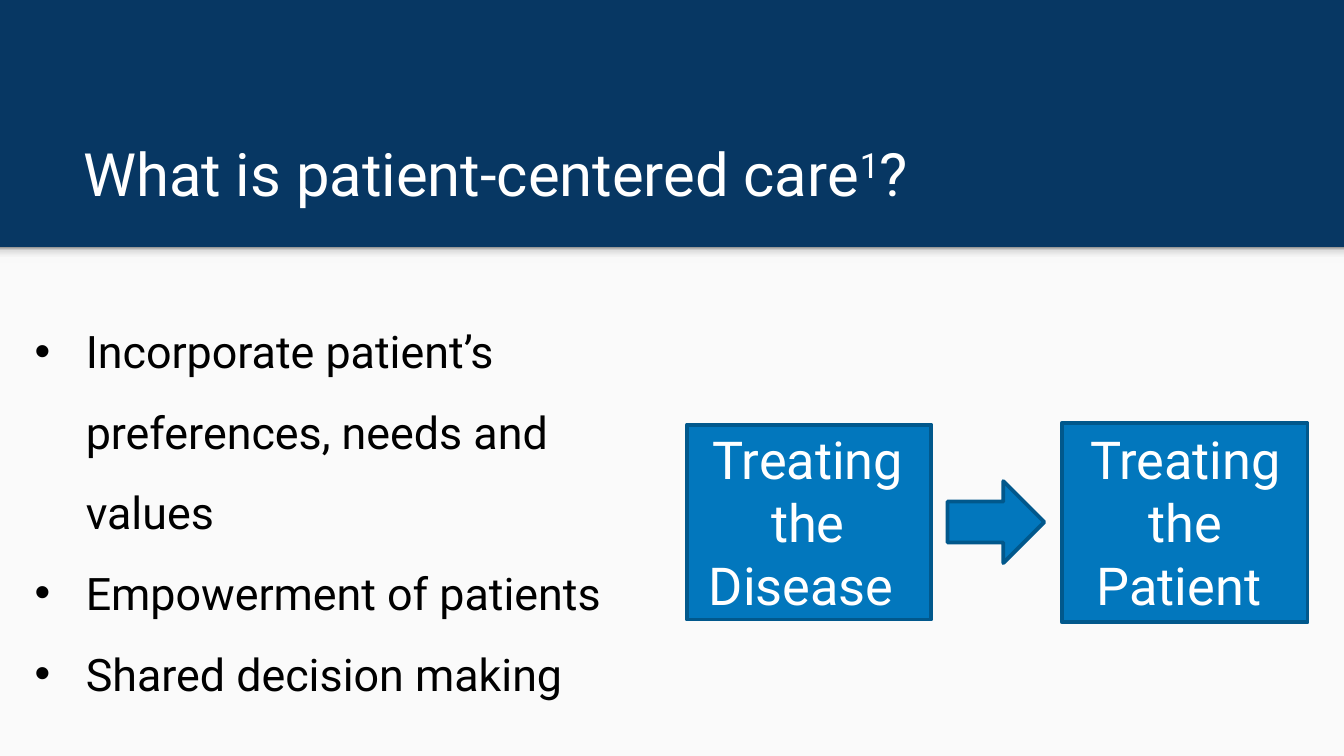
from dataclasses import dataclass

from lxml.etree import SubElement as Sub
from pptx import Presentation
from pptx.dml.color import RGBColor as Rgb
from pptx.enum.shapes import MSO_SHAPE as Kind
from pptx.enum.text import MSO_ANCHOR as Anchor, PP_ALIGN as Align
from pptx.oxml.ns import qn
from pptx.util import Inches, Pt

HUES = {"navy": "073763", "paper": "FAFAFA", "blue": "0277BD", "edge": "01588C",
        "white": "FFFFFF", "black": "000000"}
FADE = [(0, "F9F9F9"), (36, "F9F9F9"), (80, "DEDEDE"), (100, "999999")]
POINTS = ["Incorporate patient’s preferences, needs and values",
          "Empowerment of patients", "Shared decision making"]


@dataclass
class Box:
    """Place and size in inches."""
    left: float
    top: float
    width: float
    height: float

    def spots(self) -> list:
        """Give the four lengths."""
        return [Inches(n) for n in (self.left, self.top, self.width, self.height)]


@dataclass
class Card:
    """A framed label and the box its text sits in."""
    text: str
    frame: Box
    label: Box


CARDS = [
    Card("Treating the Patient ", Box(7.9, 3.15, 1.83, 1.48), Box(7.91, 3.13, 1.82, 1.51)),
    Card("Treating the Disease ", Box(5.11, 3.16, 1.82, 1.45), Box(5.1, 3.13, 1.82, 1.51)),
]


def hue(name: str) -> Rgb:
    """Look up a colour."""
    return Rgb.from_string(HUES[name])


def add_shape(slide, kind, box: Box, fill: str, edge: str = ""):
    """Draw a flat shape, outlined if an edge is named."""
    shape = slide.shapes.add_shape(kind, *box.spots())
    shape.shadow.inherit = False
    shape.fill.solid()
    shape.fill.fore_color.rgb = hue(fill)
    if edge:
        shape.line.color.rgb = hue(edge)
        shape.line.width = Pt(2)
    else:
        shape.line.fill.background()
    return shape


def add_fade(slide, box: Box) -> None:
    """Draw the soft shade below the header."""
    shape = add_shape(slide, Kind.RECTANGLE, box, "paper")
    shape.fill.gradient()
    shape.fill.gradient_angle = 90
    stops = shape._element.spPr.find(qn("a:gradFill")).find(qn("a:gsLst"))
    for stop in list(stops):
        stops.remove(stop)
    for spot, tone in FADE:
        stop = Sub(stops, qn("a:gs"), pos=str(spot * 1000))
        Sub(stop, qn("a:srgbClr"), val=tone)


def add_frame(slide, box: Box):
    """Add a wrapping text box and return its frame."""
    frame = slide.shapes.add_textbox(*box.spots()).text_frame
    frame.word_wrap = True
    return frame


def add_run(para, text: str, size: int, tone: str, rise: int = 0) -> None:
    """Add one styled run, raised by a percentage."""
    run = para.add_run()
    run.text = text
    run.font.name = "Roboto"
    run.font.size = Pt(size)
    run.font.color.rgb = hue(tone)
    if rise:
        run.font._element.set("baseline", str(rise * 1000))


def add_title(slide, box: Box) -> None:
    """Write the heading with its raised note mark."""
    frame = add_frame(slide, box)
    frame.vertical_anchor = Anchor.BOTTOM
    frame.margin_top = frame.margin_bottom = Inches(0.1)
    for text, rise in [("What is patient-centered care", 0), ("1", 30), ("?", 0)]:
        add_run(frame.paragraphs[0], text, 32, "white", rise)


def add_list(slide, box: Box, items: list[str]) -> None:
    """Write the bulleted points."""
    frame = add_frame(slide, box)
    for i, item in enumerate(items):
        para = frame.add_paragraph() if i else frame.paragraphs[0]
        para.line_spacing = 1.5
        props = para._p.get_or_add_pPr()
        props.set("marL", str(Inches(0.38)))
        props.set("indent", str(-Inches(0.38)))
        Sub(Sub(props, qn("a:buClr")), qn("a:srgbClr"), val=HUES["black"])
        Sub(props, qn("a:buFont"), typeface="Arial")
        Sub(props, qn("a:buChar"), char="•")
        add_run(para, item, 24, "black")


def add_card(slide, card: Card) -> None:
    """Draw a card with its centred label."""
    add_shape(slide, Kind.RECTANGLE, card.frame, "blue", "edge")
    para = add_frame(slide, card.label).paragraphs[0]
    para.alignment = Align.CENTER
    add_run(para, card.text, 28, "white")


def main() -> None:
    """Build and save the slide."""
    deck = Presentation()
    deck.slide_width = Inches(10)
    deck.slide_height = deck.slide_width * 9 // 16
    slide = deck.slides.add_slide(deck.slide_layouts[6])
    slide.background.fill.solid()
    slide.background.fill.fore_color.rgb = hue("navy")
    add_shape(slide, Kind.RECTANGLE, Box(0, 1.84, 10, 3.79), "paper")
    add_fade(slide, Box(0, 1.84, 10, 0.12))
    add_title(slide, Box(0.52, 0.81, 8.99, 0.84))
    add_shape(slide, Kind.RIGHT_ARROW, Box(7.05, 3.58, 0.72, 0.61), "blue", "edge")
    add_list(slide, Box(0.16, 2.16, 4.69, 3.47), POINTS)
    for card in CARDS:
        add_card(slide, card)
    deck.save("out.pptx")


if __name__ == "__main__":
    main()
